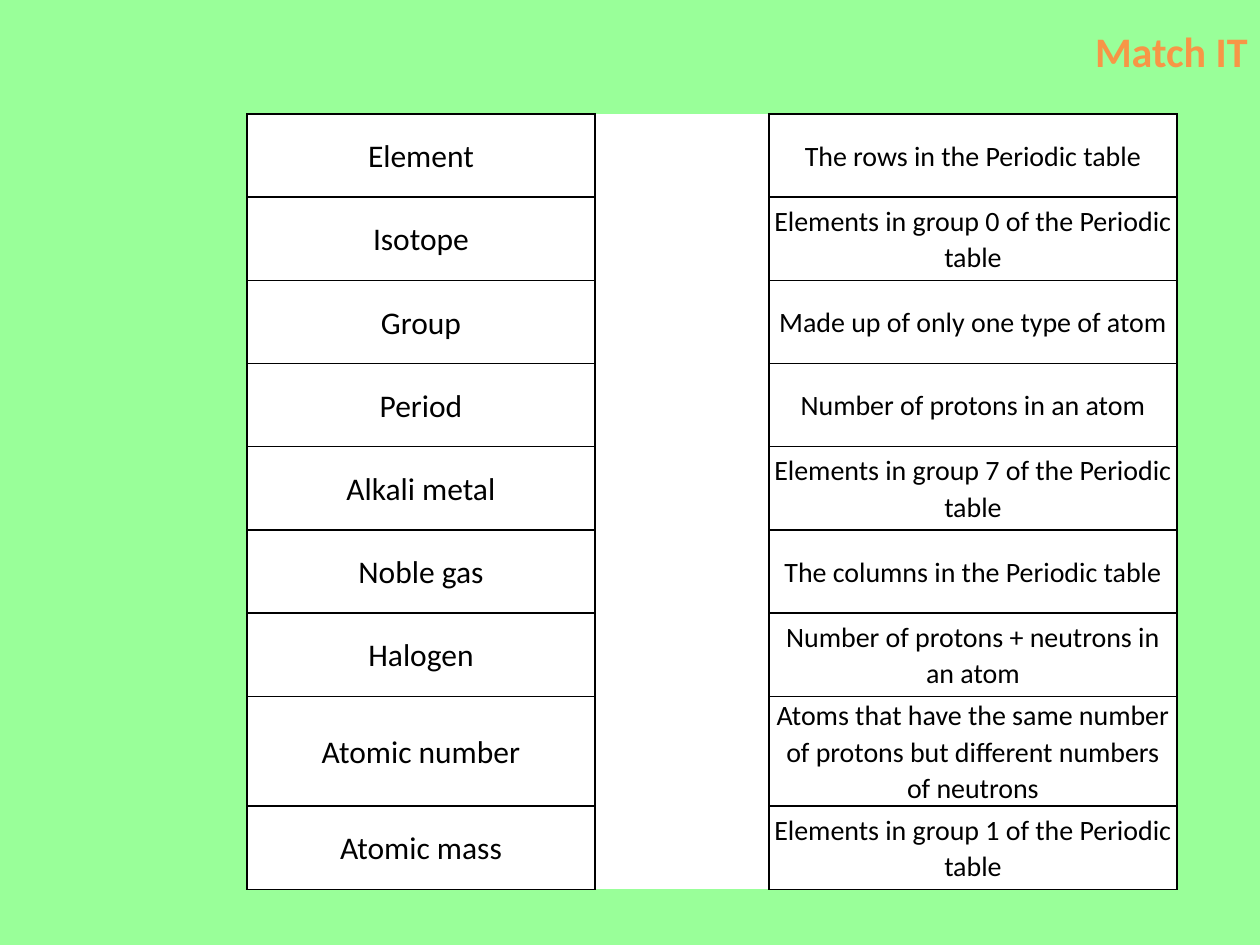
from dataclasses import dataclass

import pptx
import pptx.dml.color
import pptx.enum.text
import pptx.oxml.ns
import pptx.util
from lxml import etree

PX_PER_INCH = 126
ALIGN = pptx.enum.text.PP_ALIGN
MIDDLE = pptx.enum.text.MSO_ANCHOR.MIDDLE


@dataclass(frozen=True)
class Theme:
    font: str = "Calibri"
    background: str = "99FF99"
    cell: str = "FFFFFF"
    ink: str = "000000"
    accent: str = "F79646"
    title_size: int = 24
    term_size: int = 18
    meaning_size: int = 16


THEME = Theme()

TERMS_AND_MEANINGS = [
    ("Element", "The rows in the Periodic table"),
    ("Isotope", "Elements in group 0 of the Periodic table"),
    ("Group", "Made up of only one type of atom"),
    ("Period", "Number of protons in an atom"),
    ("Alkali metal", "Elements in group 7 of the Periodic table"),
    ("Noble gas", "The columns in the Periodic table"),
    ("Halogen", "Number of protons + neutrons in an atom"),
    ("Atomic number", "Atoms that have the same number of protons but different numbers of neutrons"),
    ("Atomic mass", "Elements in group 1 of the Periodic table"),
]


def emu(px):
    return pptx.util.Emu(px * 914400 // PX_PER_INCH)


def rgb(color):
    return pptx.dml.color.RGBColor.from_string(color)


def write_text(frame, text, *, size, color=THEME.ink, bold=False, align=ALIGN.CENTER, line_spacing=None):
    paragraph = frame.paragraphs[0]
    paragraph.alignment = align
    paragraph.line_spacing = line_spacing
    run = paragraph.add_run()
    run.text = text
    run.font.name = THEME.font
    run.font.size = pptx.util.Pt(size)
    run.font.bold = bold
    run.font.color.rgb = rgb(color)


def style_cell(cell, ruled_sides):
    """Fill the cell and rule the given sides, leaving the other sides bare."""
    properties = cell._tc.get_or_add_tcPr()
    for side in "LRTB":
        line = etree.SubElement(properties, pptx.oxml.ns.qn(f"a:ln{side}"), w=str(pptx.util.Pt(1)))
        if side in ruled_sides:
            fill = etree.SubElement(line, pptx.oxml.ns.qn("a:solidFill"))
            etree.SubElement(fill, pptx.oxml.ns.qn("a:srgbClr"), val=THEME.ink)
        else:
            etree.SubElement(line, pptx.oxml.ns.qn("a:noFill"))
    cell.fill.solid()
    cell.fill.fore_color.rgb = rgb(THEME.cell)
    cell.vertical_anchor = MIDDLE
    cell.margin_left = cell.margin_right = emu(4)
    cell.margin_top = cell.margin_bottom = 0


def add_title(slide, text):
    box = slide.shapes.add_textbox(emu(223), emu(5), emu(1037), emu(91))
    box.text_frame.word_wrap = True
    box.text_frame.vertical_anchor = MIDDLE
    write_text(box.text_frame, text, size=THEME.title_size, color=THEME.accent,
               bold=True, align=ALIGN.RIGHT)


def add_matching_table(slide, pairs):
    """Terms and meanings, with one tall gap between them for drawing matches."""
    widths = (348, 174, 408)
    height = emu(749)
    table = slide.shapes.add_table(len(pairs), len(widths), emu(247), emu(114),
                                   emu(sum(widths)), height).table
    table.first_row = table.horz_banding = False
    for column, width in zip(table.columns, widths):
        column.width = emu(width)
    for index, (term, meaning) in enumerate(pairs):
        table.rows[index].height = height // len(pairs)
        term_cell, gap, meaning_cell = table.rows[index].cells
        style_cell(term_cell, "LRTB")
        style_cell(gap, "LR")
        style_cell(meaning_cell, "LRTB")
        write_text(term_cell.text_frame, term, size=THEME.term_size, line_spacing=1.07)
        write_text(meaning_cell.text_frame, meaning, size=THEME.meaning_size, line_spacing=1.07)
    table.cell(0, 1).merge(table.cell(len(pairs) - 1, 1))


def main():
    presentation = pptx.Presentation()
    presentation.slide_width, presentation.slide_height = emu(1260), emu(945)
    slide = presentation.slides.add_slide(presentation.slide_layouts[6])
    slide.background.fill.solid()
    slide.background.fill.fore_color.rgb = rgb(THEME.background)
    add_matching_table(slide, TERMS_AND_MEANINGS)
    add_title(slide, "Match IT")
    presentation.save("out.pptx")


if __name__ == "__main__":
    main()
